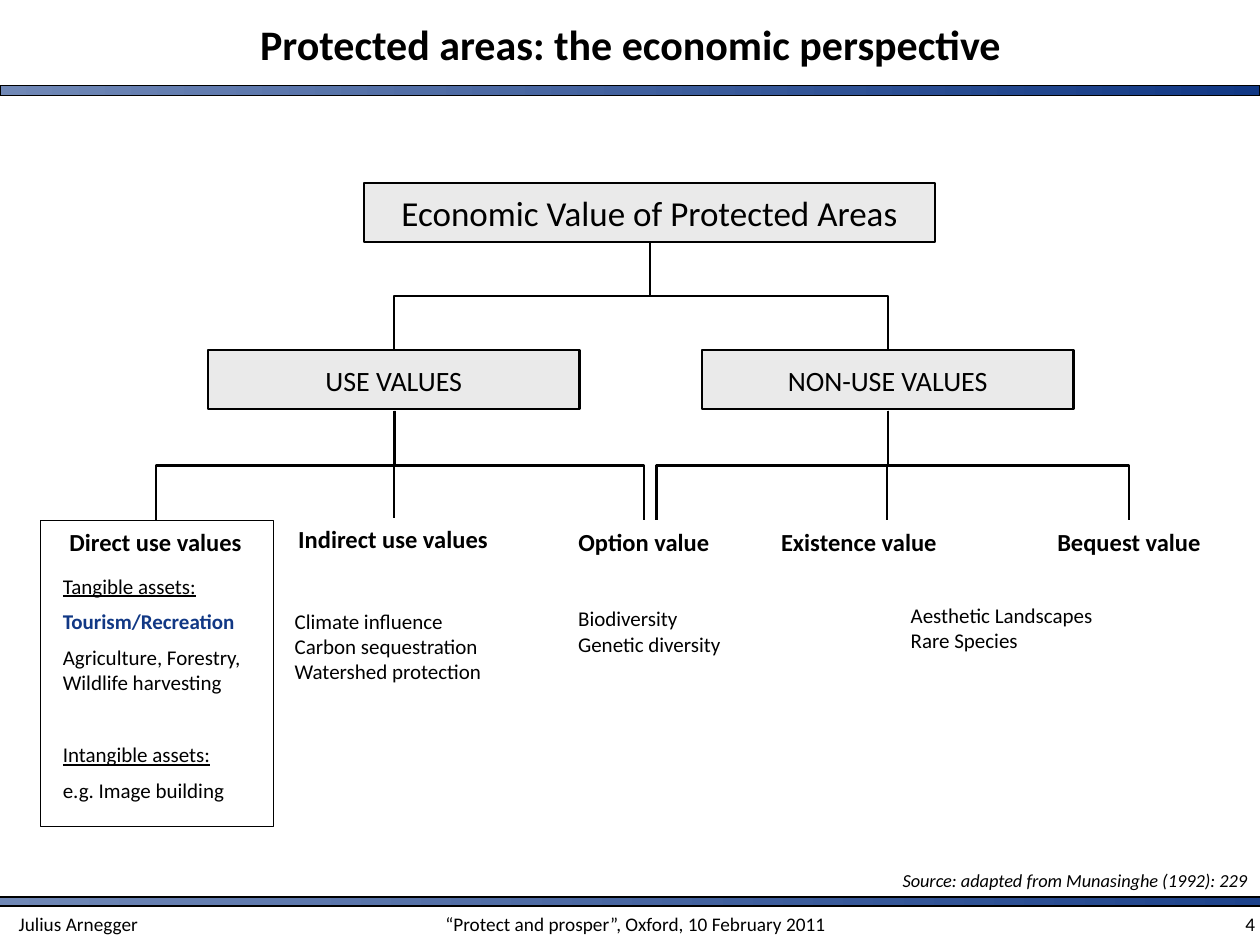
import pptx
import pptx.util
import pptx.dml.color
import pptx.enum.shapes
import pptx.enum.text
import pptx.oxml.ns
import lxml.etree

Inches = pptx.util.Inches
Pt = pptx.util.Pt
RGBColor = pptx.dml.color.RGBColor
ALIGN = pptx.enum.text.PP_ALIGN
ANCHOR = pptx.enum.text.MSO_ANCHOR
RECTANGLE = pptx.enum.shapes.MSO_SHAPE.RECTANGLE
CONNECTOR = pptx.enum.shapes.MSO_CONNECTOR

BLACK = RGBColor(0x00, 0x00, 0x00)
NAVY = RGBColor(0x11, 0x38, 0x85)
PALE_NAVY = RGBColor(0x70, 0x88, 0xB6)
GREY = RGBColor(0xEA, 0xEA, 0xEA)

HEADING = {"size": Pt(14), "bold": True}
BODY = {"size": Pt(12)}
FOOTER = {"size": Pt(11)}
UNDERLINED = {"underline": True}
HIGHLIGHT = {"bold": True}

BARS = [(0, 0.68, 10, 0.08), (-0.01, 7.12, 11.49, 0.07)]

LABELS = [
    ("“Protect and prosper”, Oxford, 10 February 2011", (3.43, 7.19, 3.23, 0.31), ALIGN.CENTER, FOOTER),
    ("4", (8.82, 7.19, 1.24, 0.31), ALIGN.RIGHT, FOOTER),
    ("Julius Arnegger", (0.05, 7.19, 2.37, 0.31), ALIGN.LEFT, FOOTER),
    ("Source: adapted from Munasinghe (1992): 229", (5.83, 6.85, 4.17, 0.29), ALIGN.RIGHT,
     {"size": Pt(10.5), "italic": True}),
    ("Direct use values", (0.32, 4.13, 1.83, 0.33), ALIGN.CENTER, HEADING),
    ("Indirect use values", (1.9, 4.11, 2.44, 0.33), ALIGN.CENTER, HEADING),
    ("Option value", (4.15, 4.13, 1.92, 0.33), ALIGN.CENTER, HEADING),
    ("Existence value", (6.1, 4.13, 1.89, 0.33), ALIGN.LEFT, HEADING),
    ("Bequest value", (8, 4.13, 1.92, 0.33), ALIGN.CENTER, HEADING),
]

EXAMPLES = [
    (["Climate influence", "Carbon sequestration", "Watershed protection"], (2.24, 4.78, 2.31, 0.71)),
    (["Biodiversity", "Genetic diversity"], (4.49, 4.76, 2, 0.5)),
    (["Aesthetic Landscapes", "Rare Species"], (7.13, 4.73, 2.87, 0.5)),
]

DIRECT_USES = [
    ("Tangible assets:", UNDERLINED, BLACK, {}),
    ("Tourism/Recreation", HIGHLIGHT, NAVY, {}),
    ("Agriculture, Forestry, Wildlife harvesting", {}, BLACK, {}),
    ("Intangible assets:", UNDERLINED, BLACK, {"space_before": Pt(20.5)}),
    ("e.g. Image building", {}, BLACK, {}),
]

VALUE_BOXES = [
    ("Economic Value of Protected Areas", (2.89, 1.45, 4.53, 0.47), 20),
    ("USE VALUES", (1.65, 2.78, 2.95, 0.47), 16),
    ("NON-USE VALUES", (5.57, 2.78, 2.95, 0.47), 16),
]

BRANCHES = [
    ((5.16, 1.93), 2.77, [3.13, 7.05]),
    ((3.13, 3.26), 4.13, [1.24, 5.11]),
    ((7.05, 3.26), 4.13, [7.04, 8.96, 5.21]),
]
INDIRECT_STEM = (3.13, 3.26, 3.13, 4.11)

presentation = pptx.Presentation()
presentation.slide_width = Inches(10)
presentation.slide_height = Inches(7.5)
slide = presentation.slides.add_slide(presentation.slide_layouts[6])


def apply(target, values):
    for name, value in values.items():
        setattr(target, name, value)


def write(paragraph, words, font, color=BLACK, layout=None):
    run = paragraph.add_run()
    run.text = words
    apply(run.font, {"name": "Calibri", **font})
    run.font.color.rgb = color
    apply(paragraph, layout or {})


def add_text(place, lines, anchor=ANCHOR.TOP):
    frame = slide.shapes.add_textbox(*map(Inches, place)).text_frame
    apply(frame, {"word_wrap": True, "vertical_anchor": anchor})
    for index, line in enumerate(lines):
        write(frame.add_paragraph() if index else frame.paragraphs[0], *line)


def add_rectangle(place, width):
    rectangle = slide.shapes.add_shape(RECTANGLE, *map(Inches, place))
    rectangle.shadow.inherit = False
    rectangle.line.color.rgb = BLACK
    rectangle.line.width = Pt(width)
    return rectangle


def add_line(kind, *ends):
    line = slide.shapes.add_connector(kind, *map(Inches, ends))
    line.line.color.rgb = BLACK
    line.line.width = Pt(1.25)
    lxml.etree.SubElement(line._element.spPr, pptx.oxml.ns.qn("a:effectLst"))
    return line


def add_branch(x, top, target, bottom):
    middle_x, middle_y = (x + target) / 2, (top + bottom) / 2
    drop, reach = (bottom - top) / 2, abs(target - x) / 2
    side = -1 if target < x else 1
    branch = add_line(CONNECTOR.ELBOW, middle_x + side * drop, middle_y - reach,
                      middle_x - side * drop, middle_y + reach)
    turn = 90 if side < 0 else 270
    branch._element.spPr.find(pptx.oxml.ns.qn("a:xfrm")).set("rot", str(turn * 60000))


for place in BARS:
    bar = add_rectangle(place, 0.75)
    bar.fill.gradient()
    bar.fill.gradient_angle = 0
    for stop, color in zip(bar.fill.gradient_stops, (PALE_NAVY, NAVY)):
        stop.color.rgb = color

add_text((1.67, 0, 6.67, 0.7),
         [("Protected areas: the economic perspective", {"size": Pt(24), "bold": True},
           BLACK, {"alignment": ALIGN.CENTER})], ANCHOR.MIDDLE)

add_rectangle((0.32, 4.13, 1.85, 2.43), 0.75).fill.background()

for words, place, size in VALUE_BOXES:
    value_box = add_rectangle(place, 1.25)
    value_box.fill.solid()
    value_box.fill.fore_color.rgb = GREY
    apply(value_box.text_frame, {"word_wrap": False, "vertical_anchor": ANCHOR.MIDDLE})
    write(value_box.text_frame.paragraphs[0], words, {"size": Pt(size)}, BLACK,
          {"alignment": ALIGN.CENTER})

for words, place, alignment, font in LABELS:
    add_text(place, [(words, font, BLACK, {"alignment": alignment})])

for names, place in EXAMPLES:
    add_text(place, [(name, BODY) for name in names])

add_text((0.4, 4.5, 1.92, 2.5),
         [(words, {**BODY, **font}, color, {"space_after": Pt(6), **spacing})
          for words, font, color, spacing in DIRECT_USES])

for (x, top), bottom, targets in BRANCHES:
    for target in targets:
        add_branch(x, top, target, bottom)
add_line(CONNECTOR.STRAIGHT, *INDIRECT_STEM)

presentation.save("out.pptx")
